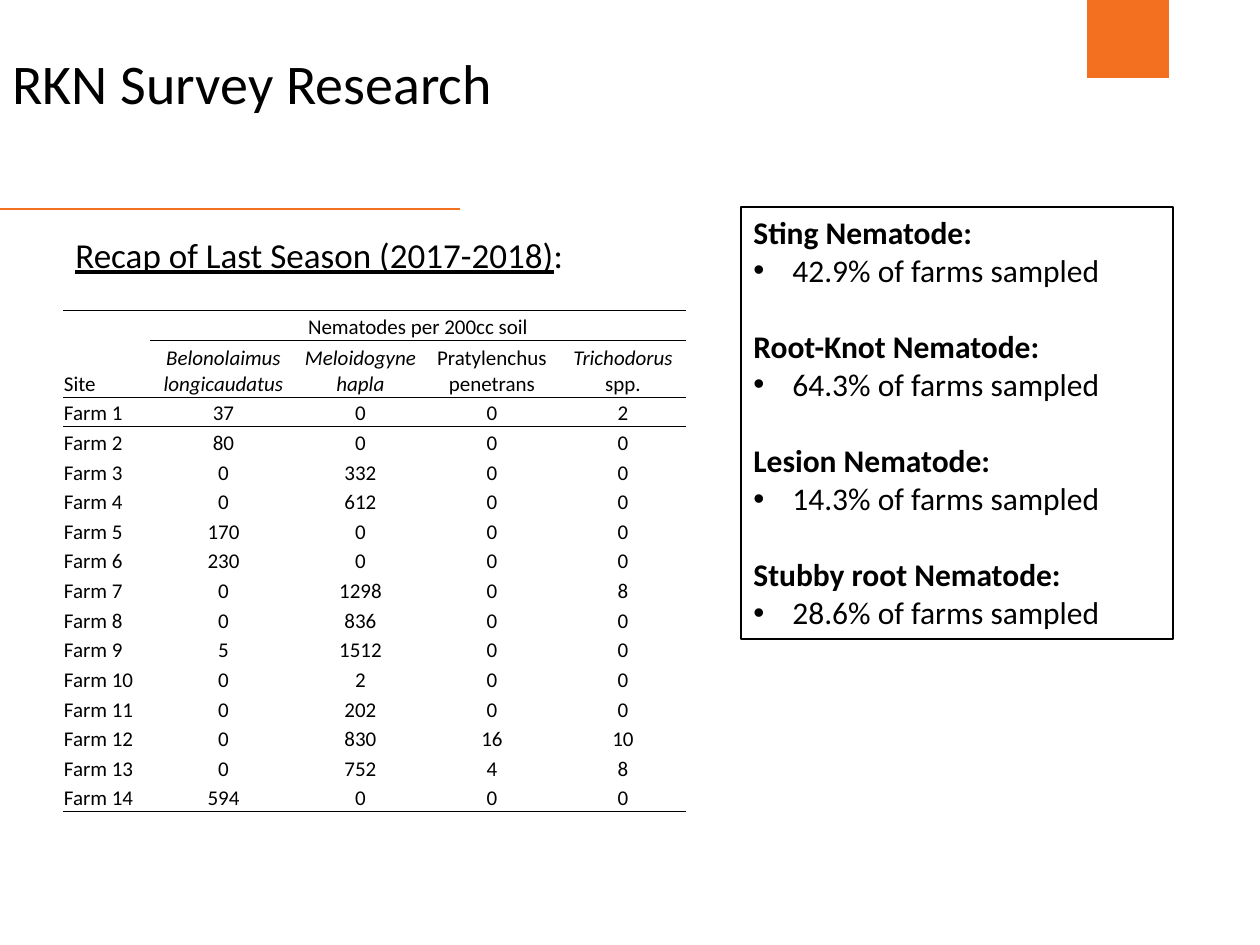
from lxml import etree
from pptx import Presentation
from pptx.dml.color import RGBColor
from pptx.enum.shapes import MSO_CONNECTOR, MSO_SHAPE
from pptx.enum.text import MSO_ANCHOR, PP_ALIGN
from pptx.oxml.ns import qn
from pptx.util import Pt

PX = 914400 / 126
BLACK, ORANGE = "000000", "F37021"
RECTANGLE, STRAIGHT = MSO_SHAPE.RECTANGLE, MSO_CONNECTOR.STRAIGHT
LEFT, CENTER = PP_ALIGN.LEFT, PP_ALIGN.CENTER
MIDDLE, BOTTOM = MSO_ANCHOR.MIDDLE, MSO_ANCHOR.BOTTOM
NO_STYLE_NO_GRID = "{2D5ABB26-0587-4C30-8999-92F81FD0307C}"
rgb = RGBColor.from_string


def px(*lengths):
    """Turn pixel lengths into a list of EMU."""
    return [round(length * PX) for length in lengths]


def write(paragraph, text, size, bold=False, italic=False, underline=False):
    """Append one run of text to the paragraph."""
    run = paragraph.add_run()
    run.text = text
    font = run.font
    font.name, font.size = "Calibri", Pt(size)
    font.bold, font.italic, font.underline = bold, italic, underline
    font.color.rgb = rgb(BLACK)


prs = Presentation()
prs.slide_width, prs.slide_height = px(1260, 945)
slide = prs.slides.add_slide(prs.slide_layouts[6])
shapes = slide.shapes

# Orange accents
tab = shapes.add_shape(RECTANGLE, *px(1087, -14, 82, 92))
tab.shadow.inherit = False
tab.fill.solid()
tab.fill.fore_color.rgb = rgb(ORANGE)
tab.line.fill.background()

divider = shapes.add_connector(STRAIGHT, *px(-6, 209, 460, 209))
divider.line.color.rgb = rgb(ORANGE)
divider.line.width = Pt(1)
etree.SubElement(divider._element.spPr, qn("a:effectLst"))

# Headings
recap = shapes.add_textbox(*px(63, 232, 620, 60)).text_frame
recap.word_wrap = True
recap.paragraphs[0].line_spacing = 0.9
write(recap.paragraphs[0], "Recap of Last Season (2017-2018)", 20, underline=True)
write(recap.paragraphs[0], ":", 20)

title = shapes.add_textbox(*px(0, 38, 1134, 97)).text_frame
title.word_wrap = True
title.vertical_anchor = MIDDLE
title.paragraphs[0].line_spacing = 0.9
write(title.paragraphs[0], "RKN Survey Research", 32)

# Nematode counts: each header cell is a list of (text, italic) parts
species = [
    [("Site", False)],
    [("Belonolaimus longicaudatus", True)],
    [("Meloidogyne hapla", True)],
    [("Pratylenchus penetrans", False)],
    [("Trichodorus ", True), ("spp.", False)],
]
farm_counts = [
    (37, 0, 0, 2),
    (80, 0, 0, 0),
    (0, 332, 0, 0),
    (0, 612, 0, 0),
    (170, 0, 0, 0),
    (230, 0, 0, 0),
    (0, 1298, 0, 8),
    (0, 836, 0, 0),
    (5, 1512, 0, 0),
    (0, 2, 0, 0),
    (0, 202, 0, 0),
    (0, 830, 16, 10),
    (0, 752, 4, 8),
    (594, 0, 0, 0),
]
cells = [[[], [("Nematodes per 200cc soil", False)], [], [], []], species]
for number, counts in enumerate(farm_counts, 1):
    values = [f"Farm {number}", *counts]
    cells.append([[(str(value), False)] for value in values])

column_widths = px(87, 147, 127, 136, 126)
row_heights = px(30, 57) + px(415 / len(farm_counts)) * len(farm_counts)
table = shapes.add_table(
    len(cells), len(species), *px(63, 310), sum(column_widths), sum(row_heights)
).table
table.first_row = table.horz_banding = False
table._tbl.tblPr.find(qn("a:tableStyleId")).text = NO_STYLE_NO_GRID
for column, width in zip(table.columns, column_widths):
    column.width = width
for row, height in zip(table.rows, row_heights):
    row.height = height
table.cell(0, 1).merge(table.cell(0, 4))

last_row = len(cells) - 1
for r, row in enumerate(cells):
    for c, parts in enumerate(row):
        cell = table.cell(r, c)
        cell.margin_left, cell.margin_right, cell.margin_top = px(1, 1, 1)
        cell.margin_bottom = 0
        cell.vertical_anchor = BOTTOM
        paragraph = cell.text_frame.paragraphs[0]
        paragraph.alignment = CENTER if c else LEFT
        paragraph.font.size = Pt(12)
        for text, italic in parts:
            write(paragraph, text, 12, italic=italic)

        ruled = {
            "a:lnT": r in (0, 2) or (r == 1 and c > 0),
            "a:lnB": r in (1, last_row) or (r == 0 and c > 0),
        }
        properties = cell._tc.get_or_add_tcPr()
        for edge, visible in ruled.items():
            if visible:
                rule = etree.SubElement(properties, qn(edge), w=str(Pt(0.5)))
                paint = etree.SubElement(rule, qn("a:solidFill"))
                etree.SubElement(paint, qn("a:srgbClr"), val=BLACK)
        cell.fill.background()

# Share of farms with each nematode
farm_shares = [
    ("Sting Nematode:", "42.9%"),
    ("Root-Knot Nematode:", "64.3%"),
    ("Lesion Nematode:", "14.3%"),
    ("Stubby root Nematode:", "28.6%"),
]
summary_box = shapes.add_shape(RECTANGLE, *px(741, 207, 432, 432))
summary_box.shadow.inherit = False
summary_box.fill.background()
summary_box.line.color.rgb = rgb(BLACK)
summary_box.line.width = Pt(0.75)
summary = summary_box.text_frame
summary.word_wrap = True
summary.vertical_anchor = MSO_ANCHOR.TOP
indent = px(39)[0]
for i, (nematode, share) in enumerate(farm_shares):
    heading = summary.add_paragraph() if i else summary.paragraphs[0]
    heading.alignment = LEFT
    if i:
        heading.space_before = Pt(22)
    write(heading, nematode, 18, bold=True)

    item = summary.add_paragraph()
    item.alignment = LEFT
    bullet = item._p.get_or_add_pPr()
    bullet.set("marL", str(indent))
    bullet.set("indent", str(-indent))
    etree.SubElement(bullet, qn("a:buFont"), typeface="Arial")
    etree.SubElement(bullet, qn("a:buChar"), char="•")
    write(item, f"{share} of farms sampled", 18)

prs.save("out.pptx")
